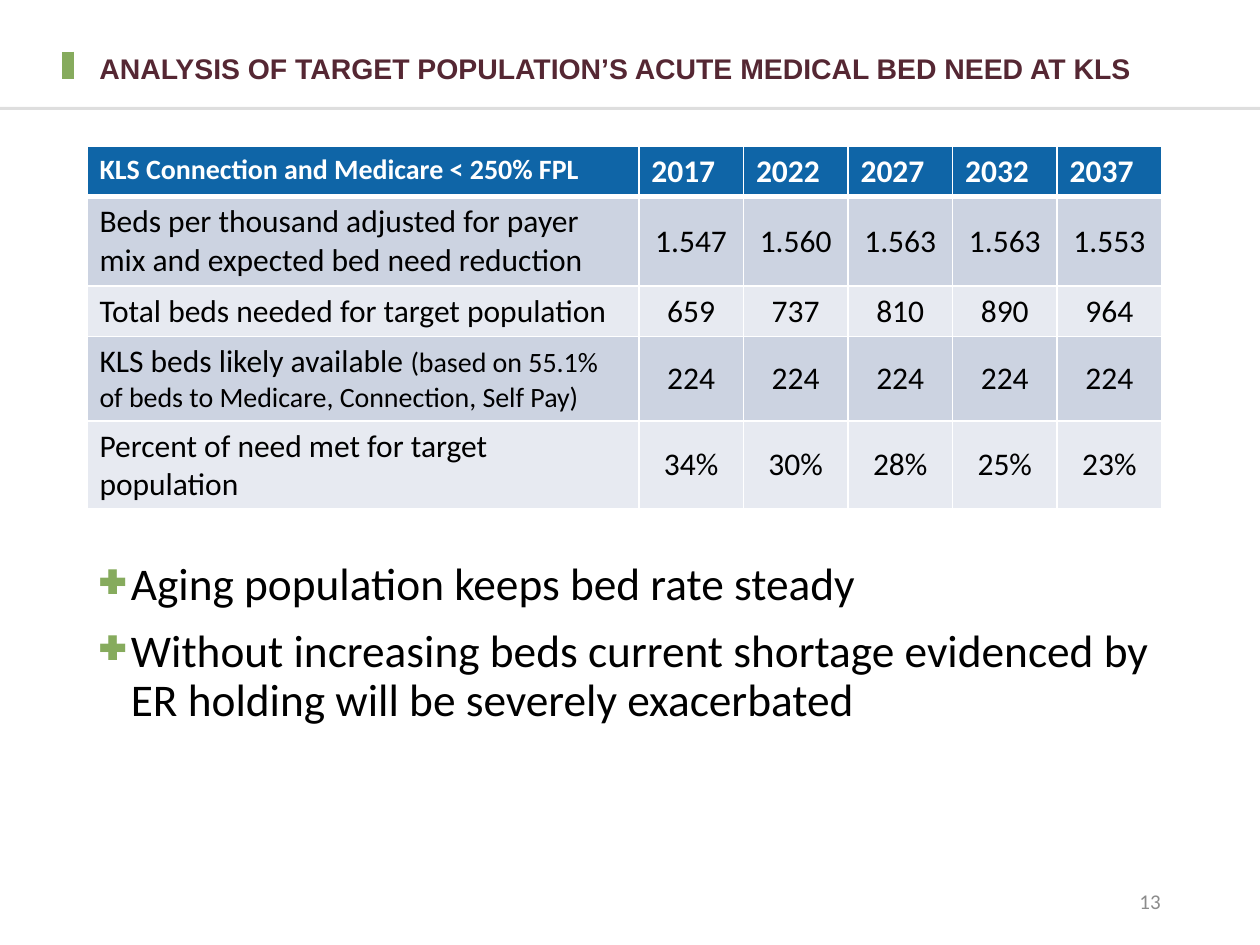
import pptx
import pptx.dml.color
import pptx.enum.shapes
import pptx.enum.text
import pptx.oxml
import pptx.oxml.ns
import pptx.util
from lxml import etree

Inches = pptx.util.Inches
Pt = pptx.util.Pt
RGBColor = pptx.dml.color.RGBColor
Align = pptx.enum.text.PP_ALIGN
Anchor = pptx.enum.text.MSO_ANCHOR
qn = pptx.oxml.ns.qn

BLACK = RGBColor(0x00, 0x00, 0x00)
WHITE = RGBColor(0xFF, 0xFF, 0xFF)
MAROON = RGBColor(0x55, 0x27, 0x33)
GREEN = RGBColor(0x86, 0xAB, 0x5D)
GRAY = RGBColor(0x8C, 0x8C, 0x8C)
BLUE = RGBColor(0x0F, 0x65, 0xA7)
BANDS = (RGBColor(0xCC, 0xD3, 0xE1), RGBColor(0xE7, 0xEA, 0xF1))

TITLE_FONT = {"name": "Arial", "size": Pt(16.2), "bold": True, "color": MAROON}
BODY_FONT = {"name": "Calibri", "size": Pt(25.9), "color": BLACK}
NUMBER_FONT = {"name": "Calibri", "size": Pt(12), "color": GRAY}
CELL_FONT = {"name": "Calibri", "size": Pt(18), "bold": False, "color": BLACK}
NOTE_FONT = {**CELL_FONT, "size": Pt(16)}
HEAD_FONT = {**CELL_FONT, "bold": True, "color": WHITE}
HEAD_LABEL_FONT = {**HEAD_FONT, "size": Pt(16)}

YEARS = ("2017", "2022", "2027", "2032", "2037")
BED_ROWS = (
    (("Beds per thousand adjusted for payer mix and expected bed need reduction",),
     ("1.547", "1.560", "1.563", "1.563", "1.553")),
    (("Total beds needed for target population",),
     ("659", "737", "810", "890", "964")),
    (("KLS beds likely available ",
      "(based on 55.1% of beds to Medicare, Connection, Self Pay)"),
     ("224",) * 5),
    (("Percent of need met for target population",),
     ("34%", "30%", "28%", "25%", "23%")),
)
LABEL_WIDTH, YEAR_WIDTH = 4.38, 0.83
ROW_HEIGHTS = (0.4, 0.71, 0.4, 0.67, 0.7)
FINDINGS = (
    "Aging population keeps bed rate steady",
    "Without increasing beds current shortage evidenced by ER holding will be severely exacerbated",
)


def set_font(font, values):
    for key, value in values.items():
        if key == "color":
            font.color.rgb = value
        else:
            setattr(font, key, value)


def add_run(paragraph, text, font):
    run = paragraph.add_run()
    run.text = text
    set_font(run.font, font)


def add_frame(slide, box, anchor):
    frame = slide.shapes.add_textbox(*map(Inches, box)).text_frame
    frame.word_wrap = True
    frame.vertical_anchor = anchor
    return frame


def add_rule(slide, start, end, color, width):
    rule = slide.shapes.add_connector(
        pptx.enum.shapes.MSO_CONNECTOR.STRAIGHT, *map(Inches, start + end))
    rule.line.color.rgb = color
    rule.line.width = Pt(width)
    etree.SubElement(rule._element.spPr, qn("a:effectLst"))
    return rule


def add_header(slide, box):
    left, top, width, height = box
    marker_x = left - 0.15
    add_rule(slide, (marker_x, top + 0.14), (marker_x, top + 0.36), GREEN, 7)
    rule_y = top + height + 0.02
    divider = add_rule(slide, (0, rule_y), (10, rule_y), BLACK, 1.75)
    ink = divider._element.spPr.find(".//" + qn("a:srgbClr"))
    etree.SubElement(ink, qn("a:alpha"), val="12000")
    title = add_frame(slide, box, Anchor.MIDDLE).paragraphs[0]
    title.line_spacing = 0.9
    add_run(title, "ANALYSIS OF TARGET POPULATION’S ACUTE MEDICAL BED NEED AT KLS", TITLE_FONT)


def border_cell(cell, bottom_width):
    properties = cell._tc.get_or_add_tcPr()
    widths = {"lnL": 1, "lnR": 1, "lnT": 1, "lnB": bottom_width}
    for index, (side, width) in enumerate(widths.items()):
        edge = etree.Element(qn("a:" + side), w=str(Pt(width)))
        fill = etree.SubElement(edge, qn("a:solidFill"))
        etree.SubElement(fill, qn("a:srgbClr"), val=str(WHITE))
        properties.insert(index, edge)


def fill_cell(cell, parts, fonts, fill, bottom_width=1):
    cell.fill.solid()
    cell.fill.fore_color.rgb = fill
    border_cell(cell, bottom_width)
    for text, font in zip(parts, fonts):
        add_run(cell.text_frame.paragraphs[0], text, font)


def add_bed_table(slide, box):
    beds = slide.shapes.add_table(
        len(ROW_HEIGHTS), len(YEARS) + 1, *map(Inches, box)).table
    for column, width in zip(beds.columns, (LABEL_WIDTH,) + (YEAR_WIDTH,) * len(YEARS)):
        column.width = Inches(width)
    for row, height in zip(beds.rows, ROW_HEIGHTS):
        row.height = Inches(height)

    fill_cell(beds.cell(0, 0), ("KLS Connection and Medicare < 250% FPL",),
              (HEAD_LABEL_FONT,), BLUE, 3)
    for column, year in enumerate(YEARS, 1):
        fill_cell(beds.cell(0, column), (year,), (HEAD_FONT,), BLUE, 3)

    for row, (label, values) in enumerate(BED_ROWS, 1):
        band = BANDS[(row - 1) % 2]
        fill_cell(beds.cell(row, 0), label, (CELL_FONT, NOTE_FONT), band)
        for column, value in enumerate(values, 1):
            cell = beds.cell(row, column)
            fill_cell(cell, (value,), (CELL_FONT,), band)
            cell.vertical_anchor = Anchor.MIDDLE
            cell.text_frame.paragraphs[0].alignment = Align.CENTER


def add_findings(slide, box):
    frame = add_frame(slide, box, Anchor.TOP)
    for index, finding in enumerate(FINDINGS):
        paragraph = frame.add_paragraph() if index else frame.paragraphs[0]
        properties = paragraph._p.get_or_add_pPr()
        properties.set("marL", str(Inches(0.25)))
        properties.set("indent", str(Inches(-0.25)))
        bullet_color = etree.SubElement(properties, qn("a:buClr"))
        etree.SubElement(bullet_color, qn("a:srgbClr"), val=str(GREEN))
        etree.SubElement(properties, qn("a:buChar"), char="✚")
        paragraph.line_spacing = 0.9
        if index:
            paragraph.space_before = Pt(10)
        add_run(paragraph, finding, BODY_FONT)


def add_page_number(slide, box):
    number = add_frame(slide, box, Anchor.MIDDLE).paragraphs[0]
    number.alignment = Align.RIGHT
    add_run(number, "13", NUMBER_FONT)


def main():
    deck = pptx.Presentation()
    deck.slide_width, deck.slide_height = Inches(10), Inches(7.5)
    slide = deck.slides.add_slide(deck.slide_layouts[6])
    add_header(slide, (0.69, 0.27, 8.62, 0.57))
    add_findings(slide, (0.69, 4.41, 8.62, 1.67))
    add_page_number(slide, (7.06, 6.95, 2.25, 0.4))
    add_bed_table(slide, (0.69, 1.16, 8.53, 2.88))
    deck.save("out.pptx")


if __name__ == "__main__":
    main()
